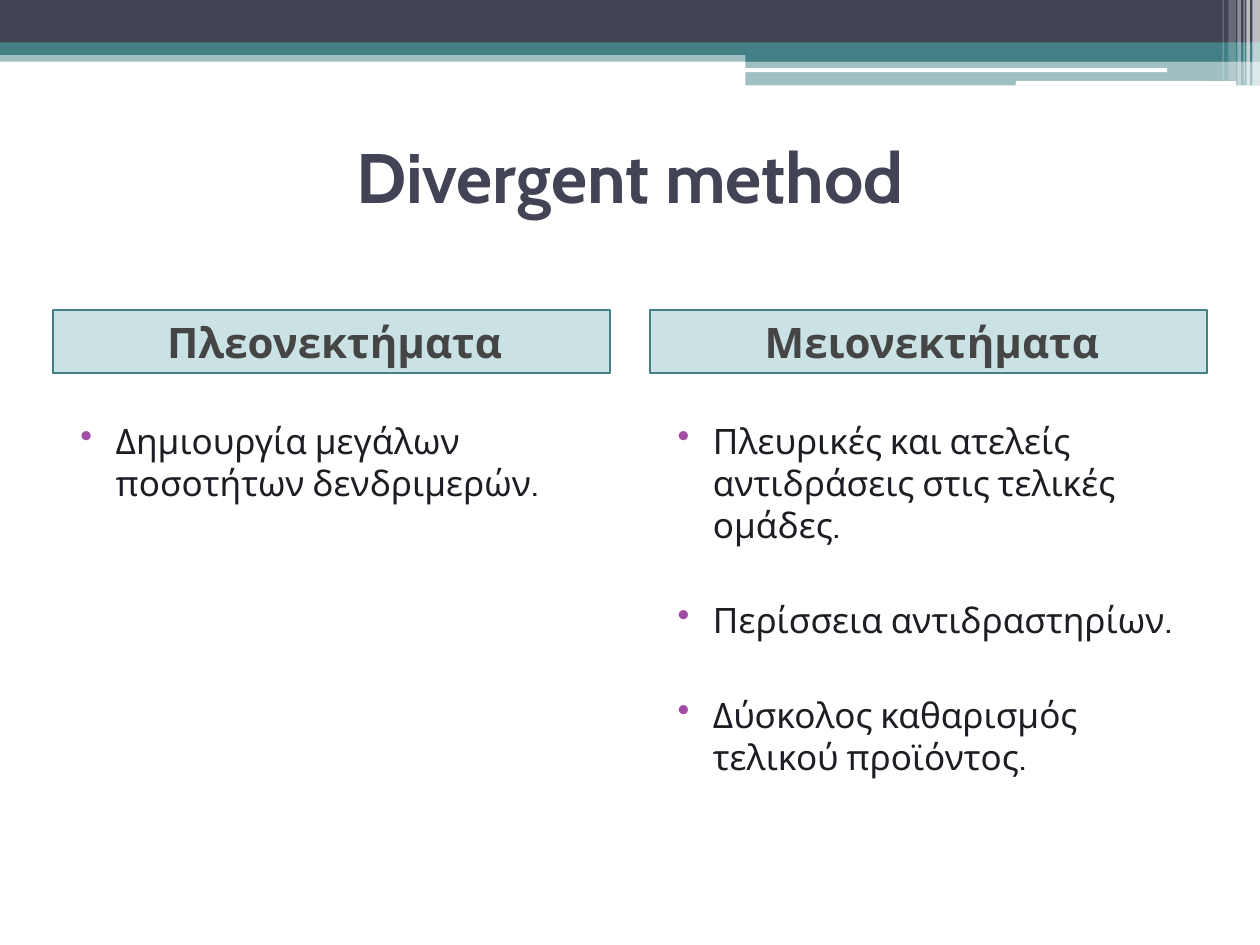
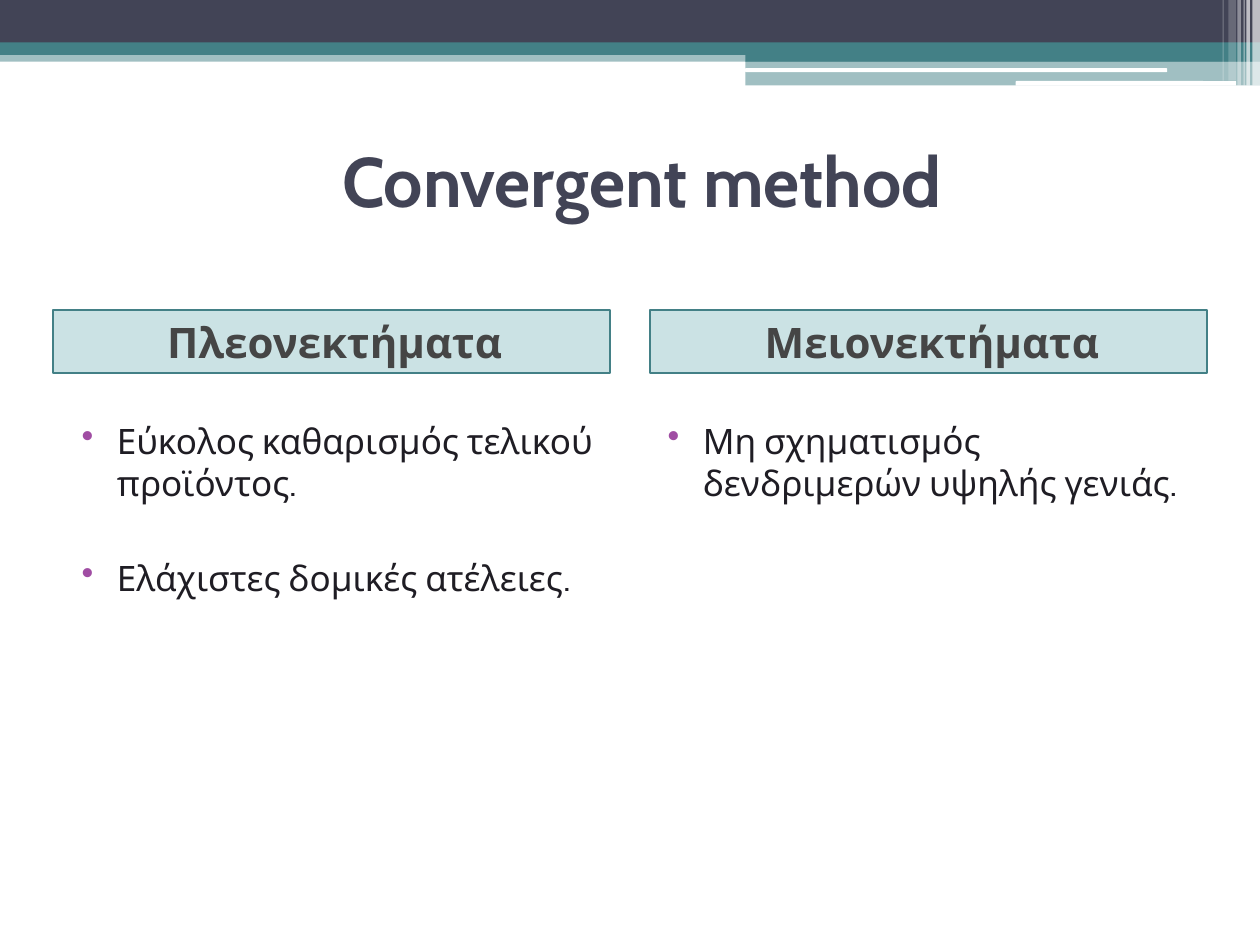
from lxml import etree
from pptx import Presentation
from pptx.dml.color import RGBColor
from pptx.enum.shapes import MSO_SHAPE
from pptx.enum.text import MSO_ANCHOR, PP_ALIGN
from pptx.oxml.ns import qn
from pptx.util import Pt

RECTANGLE = MSO_SHAPE.RECTANGLE
ROUNDED = MSO_SHAPE.ROUNDED_RECTANGLE
TOP, MIDDLE = MSO_ANCHOR.TOP, MSO_ANCHOR.MIDDLE
LEFT, CENTER = PP_ALIGN.LEFT, PP_ALIGN.CENTER

FONT = "Cabin"
NAVY, TEAL, WHITE = "424456", "438086", "FFFFFF"
HEADING_FILL, HEADING_TEXT = "328E97", "454545"
BODY_TEXT, BULLET = "1F1D24", "A04DA3"

WIDTH, HEIGHT = 720, 540
HEADING_TOP, HEADING_WIDTH, HEADING_HEIGHT = 177.12, 318.24, 36
HEADINGS = [(30.24, "Πλεονεκτήματα"), (371.52, "Μειονεκτήματα")]
LIST_TOP, LIST_HEIGHT = 236.16, 282.96
TEXT_INDENT, BULLET_INDENT = 28.8, -20.16
FIRST_GAP, ITEM_GAP = 3, 30.3

BANDS = [
    (RECTANGLE, 0, 28.8, WIDTH, 6.48, TEAL, 50),
    (RECTANGLE, 0, 0, WIDTH, 24.48, NAVY, 100),
    (RECTANGLE, 0, 24.2, WIDTH, 7.2, TEAL, 100),
    (RECTANGLE, 426, 28.08, 294, 7.2, TEAL, 100),
    (RECTANGLE, 426, 34.8, 294, 14, TEAL, 50),
    (ROUNDED, 425.8, 39, 241.2, 2.2, WHITE, 100),
    (ROUNDED, 580.4, 46.3, 126, 2.7, WHITE, 100),
]
STRIPES = [
    (715.7, 4.3, 49, 65),
    (712.2, 2.1, 49, 65),
    (710.6, 0.7, 49, 60),
    (707.1, 2, 49, 40),
    (702, 4.3, 46.1, 20),
    (698.6, 0.7, 46.1, 30),
]

SLIDES = [
    ("Divergent method", (0, 48.96, 720, 102.24), [
        (30.24, 313.2, ["Δημιουργία μεγάλων ποσοτήτων δενδριμερών."]),
        (371.52, 318.24, [
            "Πλευρικές και ατελείς αντιδράσεις στις τελικές ομάδες.",
            "Περίσσεια αντιδραστηρίων.",
            "Δύσκολος καθαρισμός τελικού προϊόντος.",
        ]),
    ]),
    ("Convergent method", (36.72, 60.48, 660.24, 84.24), [
        (30.96, 316.8, [
            "Εύκολος καθαρισμός τελικού προϊόντος.",
            "Ελάχιστες δομικές ατέλειες.",
        ]),
        (365.76, 324, ["Μη σχηματισμός δενδριμερών υψηλής γενιάς."]),
    ]),
]


def color(value):
    return RGBColor.from_string(value)


def add_block(slide, kind, left, top, width, height, fill, opacity=100, line=None):
    shape = slide.shapes.add_shape(kind, Pt(left), Pt(top), Pt(width), Pt(height))
    shape.shadow.inherit = False
    shape.fill.solid()
    shape.fill.fore_color.rgb = color(fill)
    if opacity < 100:
        fill_color = shape.fill._xPr.find(qn("a:solidFill"))[0]
        etree.SubElement(fill_color, qn("a:alpha"), val=str(opacity * 1000))
    if line:
        shape.line.color.rgb = color(line)
        shape.line.width = Pt(1)
    else:
        shape.line.fill.background()
    return shape


def prepare_frame(shape, anchor):
    frame = shape.text_frame
    frame.word_wrap = True
    frame.vertical_anchor = anchor
    return frame


def add_text_box(slide, left, top, width, height, anchor):
    box = slide.shapes.add_textbox(Pt(left), Pt(top), Pt(width), Pt(height))
    return prepare_frame(box, anchor)


def write(paragraph, text, size, text_color, bold=False, alignment=LEFT, before=0):
    paragraph.alignment = alignment
    paragraph.space_before = Pt(before)
    run = paragraph.add_run()
    run.text = text
    run.font.name = FONT
    run.font.size = Pt(size)
    run.font.bold = bold
    run.font.color.rgb = color(text_color)


def set_bullet(paragraph):
    properties = paragraph._p.get_or_add_pPr()
    properties.set("marL", str(Pt(TEXT_INDENT)))
    properties.set("indent", str(Pt(BULLET_INDENT)))
    bullet_color = etree.SubElement(properties, qn("a:buClr"))
    etree.SubElement(bullet_color, qn("a:srgbClr"), val=BULLET)
    etree.SubElement(properties, qn("a:buChar"), char="•")


def add_header(slide):
    for band in BANDS:
        add_block(slide, *band)
    for left, width, height, opacity in STRIPES:
        add_block(slide, RECTANGLE, left, 0, width, height, WHITE, opacity)


def add_title(slide, text, bounds):
    frame = add_text_box(slide, *bounds, MIDDLE)
    write(frame.paragraphs[0], text, 40, NAVY, True, CENTER)


def add_heading(slide, left, text):
    shape = add_block(slide, RECTANGLE, left, HEADING_TOP, HEADING_WIDTH,
                      HEADING_HEIGHT, HEADING_FILL, 25, TEAL)
    paragraph = prepare_frame(shape, MIDDLE).paragraphs[0]
    write(paragraph, text, 24, HEADING_TEXT, True, CENTER, FIRST_GAP)
    paragraph._p.get_or_add_pPr().set("marL", str(Pt(3.6)))


def add_list(slide, left, width, items):
    frame = add_text_box(slide, left, LIST_TOP, width, LIST_HEIGHT, TOP)
    for index, item in enumerate(items):
        paragraph = frame.add_paragraph() if index else frame.paragraphs[0]
        gap = ITEM_GAP if index else FIRST_GAP
        write(paragraph, item, 20, BODY_TEXT, before=gap)
        set_bullet(paragraph)


def main():
    presentation = Presentation()
    presentation.slide_width = Pt(WIDTH)
    presentation.slide_height = Pt(HEIGHT)
    blank = presentation.slide_layouts[6]
    for title, title_bounds, lists in SLIDES:
        slide = presentation.slides.add_slide(blank)
        add_header(slide)
        add_title(slide, title, title_bounds)
        for left, heading in HEADINGS:
            add_heading(slide, left, heading)
        for left, width, items in lists:
            add_list(slide, left, width, items)
    presentation.save("out.pptx")


if __name__ == "__main__":
    main()
